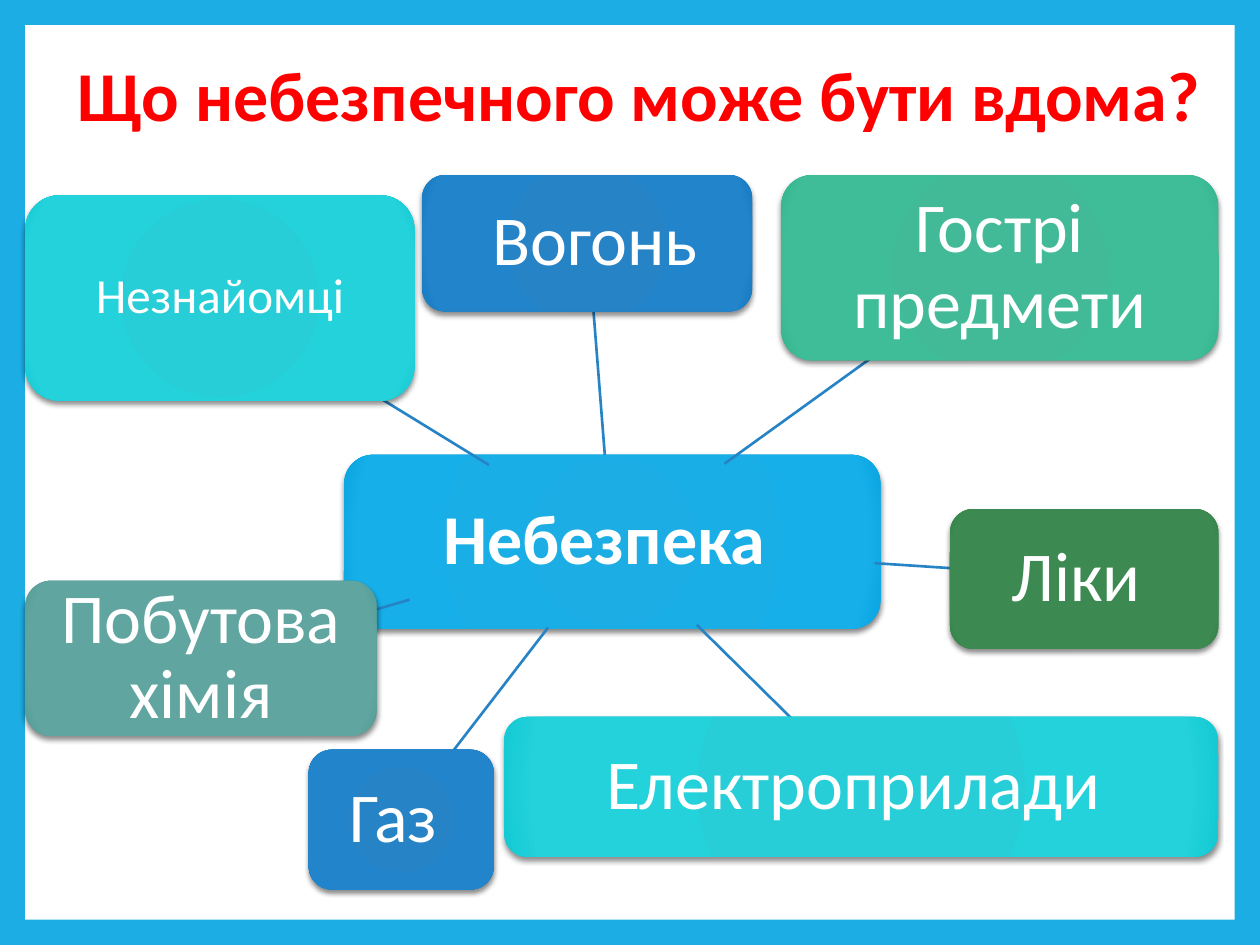
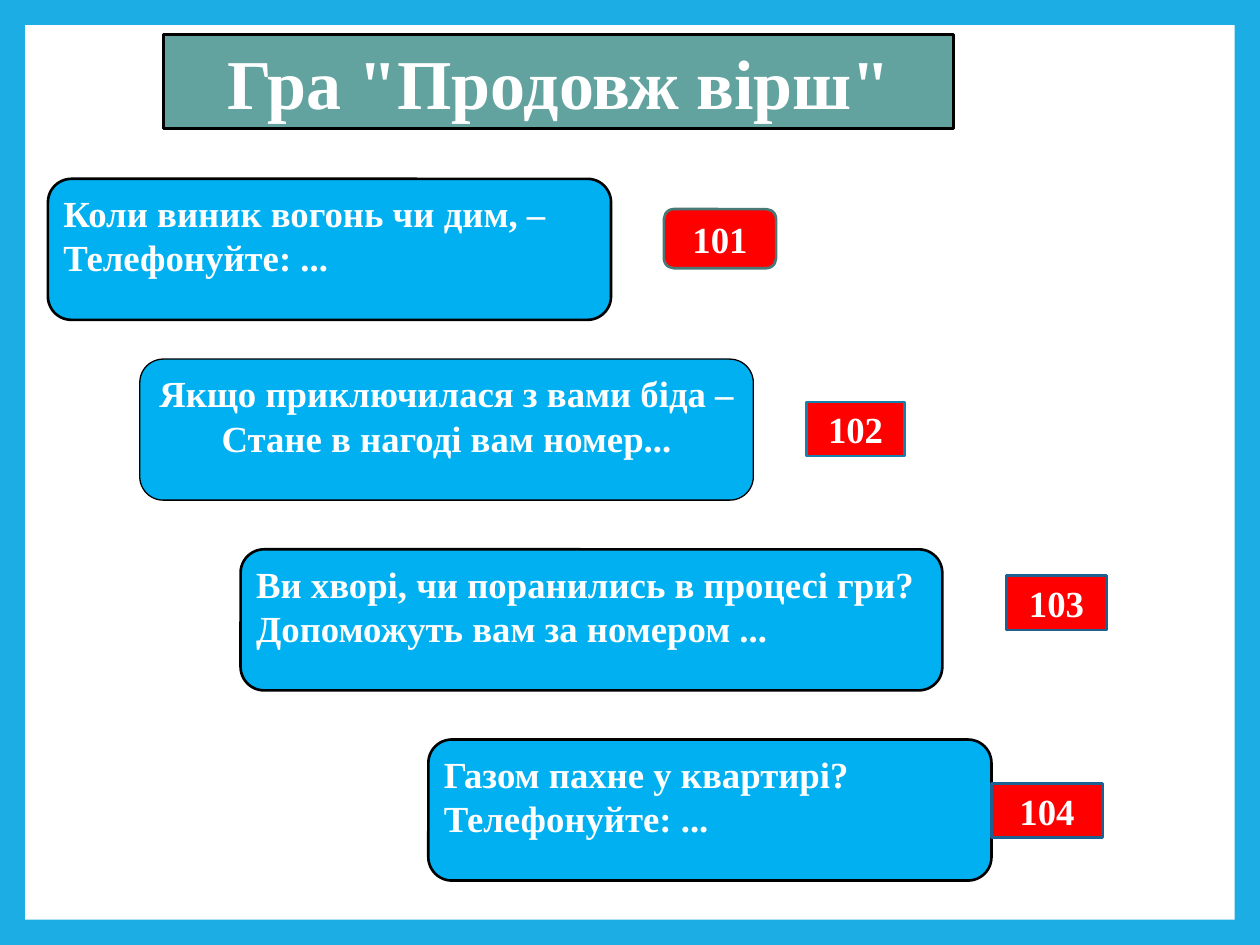
from pptx import Presentation, oxml
from pptx import util as u
from pptx.dml.color import RGBColor
from pptx.enum import shapes, text
from pptx.oxml.ns import nsdecls

Pt = u.Pt
RECT = shapes.MSO_SHAPE.RECTANGLE
ROUND = shapes.MSO_SHAPE.ROUNDED_RECTANGLE
LEFT, CENTER = text.PP_ALIGN.LEFT, text.PP_ALIGN.CENTER
TOP, MIDDLE = text.MSO_ANCHOR.TOP, text.MSO_ANCHOR.MIDDLE
FRAME, PAPER, RED, SKY, TEAL, LINK = "1CADE4", "FFFFFF", "FF0000", "00B0F0", "62A39F", "2683C6"


def paint(fmt, color):
    fmt.solid()
    fmt.fore_color.rgb = RGBColor.from_string(color)


def write(sp, lines, font, size, color=PAPER, bold=True, align=CENTER,
          anchor=TOP, inset=(5, 3), spacing=1.0, wrap=True):
    tf = sp.text_frame
    tf.word_wrap = wrap
    tf.auto_size = text.MSO_AUTO_SIZE.NONE
    tf.vertical_anchor = anchor
    tf.margin_left = tf.margin_right = Pt(inset[0])
    tf.margin_top = tf.margin_bottom = Pt(inset[1])
    for i, line in enumerate(lines):
        p = tf.add_paragraph() if i else tf.paragraphs[0]
        p.alignment = align
        p.line_spacing = spacing
        r = p.add_run()
        r.text = line
        r.font.name, r.font.size, r.font.bold = font, Pt(size), bold
        paint(r.font.fill, color)


prs = Presentation()
prs.slide_width, prs.slide_height = Pt(720), Pt(540)
master = prs.slide_master
paint(master.background.fill, FRAME)
s1, s2 = [prs.slides.add_slide(prs.slide_layouts[5]) for _ in range(2)]

panel = s1.shapes.add_shape(RECT, Pt(14.4), Pt(14.4), Pt(691.2), Pt(511.2))
panel.shadow.inherit = False
paint(panel.fill, PAPER)
panel.line.fill.background()
master.shapes.element.insert(2, panel.element)

title = s1.shapes.title
title.left, title.top, title.width, title.height = Pt(33.8), Pt(25.9), Pt(662.4), Pt(55.4)
write(title, ["Що небезпечного може бути вдома?"], "Calibri", 40, RED, inset=(7.2, 3.6), wrap=False)

BLUE = ("2683C6", "2284CA", "1479C2")
CYAN = ("27CED7", "23D2DB", "13C9D3")
dangers = [
    ("Небезпека ", 196.6, 259.9, 306.7, 99.4, ("1CADE4", "17AFE9", "07A5E1"), None),
    (" Вогонь", 241.2, 100.1, 188.6, 77.8, BLUE, (345.6, 259.9, 339.1, 177.1)),
    ("Незнайомці", 14.4, 111.6, 222.5, 117.4, CYAN, (279.4, 265.7, 197.3, 215.3)),
    ("Гострі предмети", 446.4, 100.1, 249.8, 105.8, ("42BA97", "3FBD98", "31B48E"),
     (414, 265, 506.9, 198)),
    ("Ліки ", 542.9, 290.9, 153.4, 79.9, ("3E8853", "3C8A52", "328248"),
     (499.7, 321.8, 543.6, 324.7)),
    ("Побутова хімія", 14.4, 331.9, 200.9, 88.6, (TEAL, "60A5A0", "539A95"),
     (234, 342.7, 199.4, 352.8)),
    ("Газ ", 176.4, 428.4, 105.8, 79.9, BLUE, (313.2, 358.6, 255.6, 433.4)),
    ("Електроприлади ", 288, 409.7, 408.2, 79.9, CYAN, (398.2, 357.1, 452.2, 410.4)),
]
for label, x, y, w, h, shades, link in dangers:
    if link:
        c = s1.shapes.add_connector(shapes.MSO_CONNECTOR.STRAIGHT, *map(Pt, link))
        paint(c.line.fill, LINK)
        c.line.width = Pt(1.5)
        c.element.spPr.append(oxml.parse_xml(f"<a:effectLst {nsdecls('a')}/>"))
    sp = s1.shapes.add_shape(ROUND, Pt(x), Pt(y), Pt(w), Pt(h))
    stops = "".join(f'<a:gs pos="{pos}000"><a:srgbClr val="{shade}"/></a:gs>'
                    for pos, shade in zip((0, 90, 100), shades))
    sp.element.spPr.append(oxml.parse_xml(
        f'<a:gradFill {nsdecls("a")} rotWithShape="1"><a:gsLst>{stops}</a:gsLst><a:path path="circle">'
        '<a:fillToRect l="100000" t="100000" r="100000" b="100000"/></a:path></a:gradFill>'))
    sp.line.fill.background()
    sp.element.spPr.append(oxml.parse_xml(
        f'<a:effectLst {nsdecls("a")}><a:outerShdw blurRad="{Pt(3)}" dist="{Pt(2)}" dir="5400000" '
        'rotWithShape="0"><a:srgbClr val="000000"><a:alpha val="45000"/></a:srgbClr>'
        '</a:outerShdw></a:effectLst>'))
    write(sp, [label], "Calibri", 28 if label == "Незнайомці" else 40, bold=link is None,
          anchor=MIDDLE, inset=(2, 2), spacing=0.9)

title = s2.shapes.title
title.left, title.top, title.width, title.height = Pt(93.6), Pt(19.6), Pt(451.4), Pt(54)
paint(title.fill, TEAL)
paint(title.line.fill, "000000")
title.line.width = Pt(1.5)
write(title, ['Гра "Продовж вірш"'], "Times New Roman", 40)

verses = [
    (["Коли виник вогонь чи дим, –", "Телефонуйте: ..."], 27.4, 102.2, 321.8, 1.5, LEFT),
    (["Якщо приключилася з вами біда –", "Стане в нагоді вам номер..."],
     79.9, 205.2, 350.6, 0.75, CENTER),
    (["Ви хворі, чи поранились в процесі гри?", "Допоможуть вам за номером ..."],
     137.5, 313.9, 401, 1.5, LEFT),
    (["Газом пахне у квартирі?", "Телефонуйте: ..."], 244.8, 422.6, 321.8, 1.5, LEFT),
]
answers = [
    ("101", ROUND, 379.4, 119.5, 64.1, 33.8, "497976"),
    ("102", RECT, 460.8, 229.7, 56.2, 31, "1580A9"),
    ("103", RECT, 575.3, 329, 56.9, 31, "1C6192"),
    ("104", RECT, 566.6, 447.8, 63.4, 31, "1C6192"),
]
boxes = [(lines, ROUND, x, y, w, 80.6, SKY, "000000", weight, align)
         for lines, x, y, w, weight, align in verses]
boxes += [([number], kind, x, y, w, h, RED, edge, 1.5, CENTER)
          for number, kind, x, y, w, h, edge in answers]
for lines, kind, x, y, w, h, fill, edge, weight, align in boxes:
    sp = s2.shapes.add_shape(kind, Pt(x), Pt(y), Pt(w), Pt(h))
    sp.shadow.inherit = False
    paint(sp.fill, fill)
    paint(sp.line.fill, edge)
    sp.line.width = Pt(weight)
    write(sp, lines, "Times New Roman", 21, align=align)

prs.save("out.pptx")
